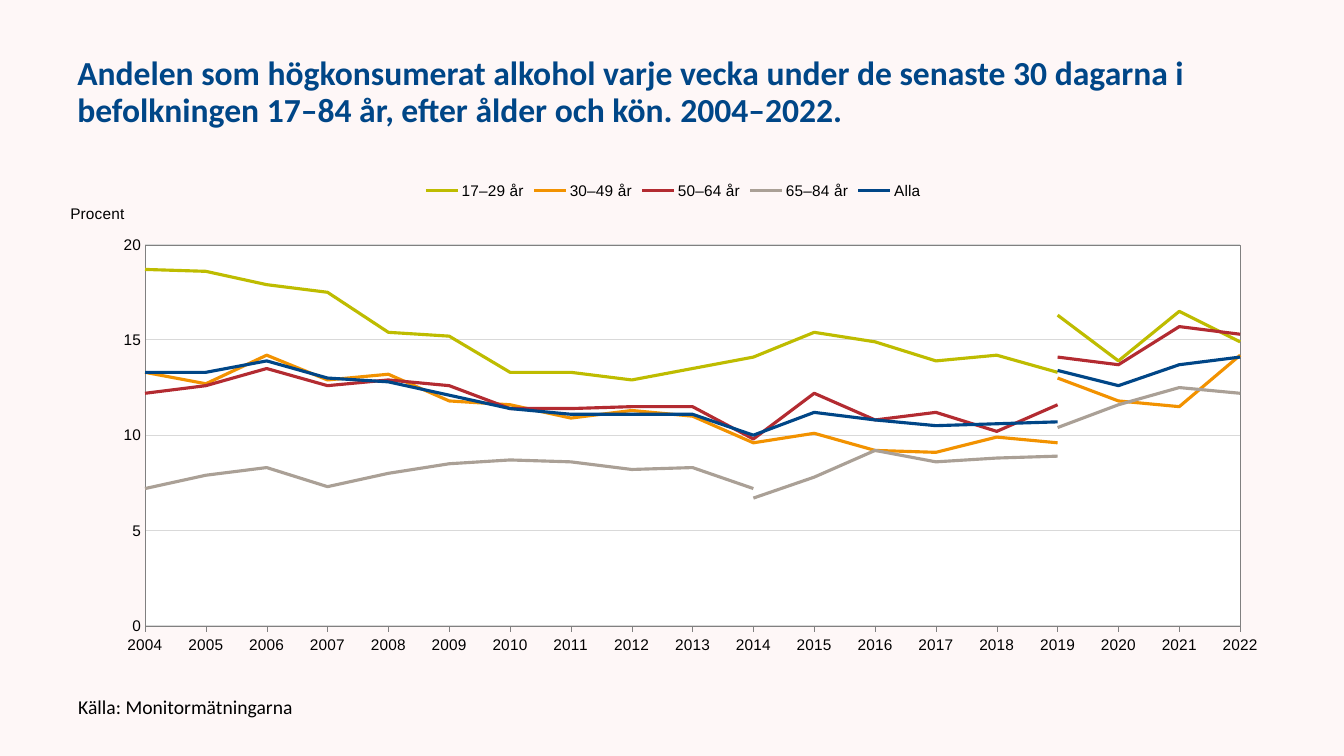
from lxml import etree
from pptx import Presentation
from pptx.chart.data import CategoryChartData
from pptx.dml.color import RGBColor
from pptx.enum.chart import XL_CHART_TYPE, XL_LEGEND_POSITION, XL_MARKER_STYLE, XL_TICK_MARK
from pptx.enum.text import MSO_ANCHOR, MSO_AUTO_SIZE, PP_ALIGN
from pptx.oxml import parse_xml
from pptx.oxml.ns import nsdecls, qn
from pptx.util import Pt

LINE_CHART = XL_CHART_TYPE.LINE
LEGEND_TOP = XL_LEGEND_POSITION.TOP
NO_MARKER = XL_MARKER_STYLE.NONE
TICK_OUTSIDE = XL_TICK_MARK.OUTSIDE
TICK_NONE = XL_TICK_MARK.NONE
MIDDLE = MSO_ANCHOR.MIDDLE
FIXED_SIZE = MSO_AUTO_SIZE.NONE
LEFT = PP_ALIGN.LEFT

BACKGROUND = RGBColor(0xFE, 0xF7, 0xF7)
BLACK = RGBColor(0, 0, 0)
NAVY = RGBColor(0x00, 0x46, 0x87)
LIME = RGBColor(0xBE, 0xBC, 0x00)
ORANGE = RGBColor(0xF2, 0x92, 0x00)
RED = RGBColor(0xB3, 0x2B, 0x31)
TAUPE = RGBColor(0xAA, 0xA0, 0x96)
AXIS_GRAY = RGBColor(0x80, 0x80, 0x80)
GRID_GRAY = RGBColor(0xD9, 0xD9, 0xD9)

TITLE = (
    "Andelen som högkonsumerat alkohol varje vecka under de senaste 30 dagarna i "
    "befolkningen 17–84 år, efter ålder och kön. 2004–2022."
)
SOURCE = "Källa: Monitormätningarna"
YEARS = range(2004, 2023)

# Each group: name, colour, then (first year, values) before and after its break.
GROUPS = [
    ("17–29 år", LIME,
     {2004: [18.7, 18.6, 17.9, 17.5, 15.4, 15.2, 13.3, 13.3, 12.9, 13.5, 14.1,
             15.4, 14.9, 13.9, 14.2, 13.3]},
     {2019: [16.3, 13.9, 16.5, 14.9]}),
    ("30–49 år", ORANGE,
     {2004: [13.3, 12.7, 14.2, 12.9, 13.2, 11.8, 11.6, 10.9, 11.3, 11, 9.6,
             10.1, 9.2, 9.1, 9.9, 9.6]},
     {2019: [13, 11.8, 11.5, 14.2]}),
    ("50–64 år", RED,
     {2004: [12.2, 12.6, 13.5, 12.6, 12.9, 12.6, 11.4, 11.4, 11.5, 11.5, 9.8,
             12.2, 10.8, 11.2, 10.2, 11.6]},
     {2019: [14.1, 13.7, 15.7, 15.3]}),
    ("65–84 år", TAUPE,
     {2004: [7.2, 7.9, 8.3, 7.3, 8, 8.5, 8.7, 8.6, 8.2, 8.3, 7.2],
      2019: [10.4, 11.6, 12.5, 12.2]},
     {2014: [6.7, 7.8, 9.2, 8.6, 8.8, 8.9]}),
    ("Alla", NAVY,
     {2004: [13.3, 13.3, 13.9, 13, 12.8, 12.1, 11.4, 11.1, 11.1, 11.1, 10,
             11.2, 10.8, 10.5, 10.6, 10.7]},
     {2019: [13.4, 12.6, 13.7, 14.1]}),
]


def spread_over_years(segments):
    """Place each segment at its first year and leave the other years empty."""
    by_year = {
        first + offset: value
        for first, values in segments.items()
        for offset, value in enumerate(values)
    }
    return [by_year.get(year) for year in YEARS]


def style_font(font, name, size, color, bold=False):
    """Set the face, size, colour and weight of a font."""
    font.name = name
    font.size = Pt(size)
    font.color.rgb = color
    font.bold = bold


def fill_text(shape, text, size, color, bold=False):
    """Write one left-aligned paragraph, centred vertically in the shape."""
    frame = shape.text_frame
    frame.word_wrap = True
    frame.auto_size = FIXED_SIZE
    frame.vertical_anchor = MIDDLE
    paragraph = frame.paragraphs[0]
    paragraph.alignment = LEFT
    paragraph.line_spacing = 0.9
    run = paragraph.add_run()
    run.text = text
    style_font(run.font, "Calibri", size, color, bold)


def add_title(slide):
    """Place and fill the title placeholder."""
    title = slide.shapes.title
    title.left, title.top, title.width, title.height = Pt(48), Pt(21.6), Pt(864), Pt(90)
    fill_text(title, TITLE, 24, NAVY, True)


def add_source(slide):
    """Add the source line below the chart."""
    box = slide.shapes.add_textbox(Pt(48.8), Pt(492.5), Pt(432), Pt(26.6))
    fill_text(box, SOURCE, 14, BLACK)


def set_layout(parent, position, **measures):
    """Give a chart part a manual layout, as fractions of the chart."""
    for old in parent.findall(qn("c:layout")):
        parent.remove(old)
    layout = parse_xml(f"<c:layout {nsdecls('c')}><c:manualLayout/></c:layout>")
    for tag, value in measures.items():
        etree.SubElement(layout[0], qn(f"c:{tag}")).set("val", str(value))
    parent.insert(position, layout)


def style_axis(axis, tick_mark):
    """Set the line, labels and tick marks of an axis."""
    axis.major_tick_mark = tick_mark
    axis.minor_tick_mark = TICK_NONE
    axis.format.line.color.rgb = AXIS_GRAY
    axis.format.line.width = Pt(0.25)
    style_font(axis.tick_labels.font, "Arial", 11, BLACK)


def style_value_axis(chart):
    """Set the scale, gridlines and horizontal title of the value axis."""
    axis = chart.value_axis
    style_axis(axis, TICK_NONE)
    axis.minimum_scale, axis.maximum_scale, axis.major_unit = 0, 20, 5
    axis.tick_labels.number_format = "0"
    axis.tick_labels.number_format_is_linked = False
    axis.major_gridlines.format.line.color.rgb = GRID_GRAY
    axis.major_gridlines.format.line.width = Pt(0.75)
    run = axis.axis_title.text_frame.paragraphs[0].add_run()
    run.text = "Procent"
    style_font(run.font, "Arial", 11, BLACK)
    title = chart.element.xpath(".//c:valAx/c:title")[0]
    title.find(f".//{qn('a:bodyPr')}").set("rot", "0")
    set_layout(title, 1, xMode="edge", yMode="edge", x=0, y=0.06)
    value_axis = chart.element.xpath(".//c:valAx")[0]
    for old in value_axis.findall(qn("c:crossBetween")):
        value_axis.remove(old)
    crossing = parse_xml(f'<c:crossBetween {nsdecls("c")} val="midCat"/>')
    value_axis.find(qn("c:crosses")).addnext(crossing)


def style_plot_area(chart):
    """Set the place, white fill and gray frame of the plot area."""
    area = chart.element.xpath(".//c:plotArea")[0]
    set_layout(area, 0, layoutTarget="inner", xMode="edge", yMode="edge",
               x=0.064, y=0.149, w=0.904, h=0.764)
    area.append(parse_xml(
        f'<c:spPr {nsdecls("c", "a")}>'
        '<a:solidFill><a:srgbClr val="FFFFFF"/></a:solidFill>'
        f'<a:ln w="{Pt(0.25)}"><a:solidFill><a:srgbClr val="{AXIS_GRAY}"/></a:solidFill></a:ln>'
        '</c:spPr>'))


def add_legend(chart):
    """Add a legend that names each group once."""
    chart.has_legend = True
    chart.legend.position = LEGEND_TOP
    chart.legend.include_in_layout = False
    style_font(chart.legend.font, "Arial", 11, BLACK)
    position = chart.element.xpath(".//c:legend/c:legendPos")[0]
    for index in reversed(range(1, 2 * len(GROUPS), 2)):
        position.addnext(parse_xml(
            f'<c:legendEntry {nsdecls("c")}><c:idx val="{index}"/>'
            '<c:delete val="1"/></c:legendEntry>'))


def add_line_chart(slide):
    """Add the chart with two series of one colour for each group."""
    data = CategoryChartData(number_format="0.0")
    data.categories = [str(year) for year in YEARS]
    colors = []
    for number, (name, color, main, separate) in enumerate(GROUPS, 1):
        data.add_series(name, spread_over_years(main))
        data.add_series(f"Series {2 * number}", spread_over_years(separate))
        colors += [color, color]
    chart = slide.shapes.add_chart(
        LINE_CHART, Pt(48.2), Pt(121.7), Pt(865.4), Pt(356.4), data).chart
    chart.has_title = False
    style_font(chart.font, "Arial", 11, BLACK)
    chart.plots[0].vary_by_categories = False
    for series, color in zip(chart.plots[0].series, colors):
        series.smooth = False
        series.marker.style = NO_MARKER
        series.format.line.color.rgb = color
        series.format.line.width = Pt(2.25)
    style_axis(chart.category_axis, TICK_OUTSIDE)
    style_value_axis(chart)
    style_plot_area(chart)
    add_legend(chart)


def main():
    """Build and save the slide."""
    presentation = Presentation()
    presentation.slide_width, presentation.slide_height = Pt(960), Pt(540)
    slide = presentation.slides.add_slide(presentation.slide_layouts[5])
    slide.background.fill.solid()
    slide.background.fill.fore_color.rgb = BACKGROUND
    add_title(slide)
    add_line_chart(slide)
    add_source(slide)
    presentation.save("out.pptx")


if __name__ == "__main__":
    main()
